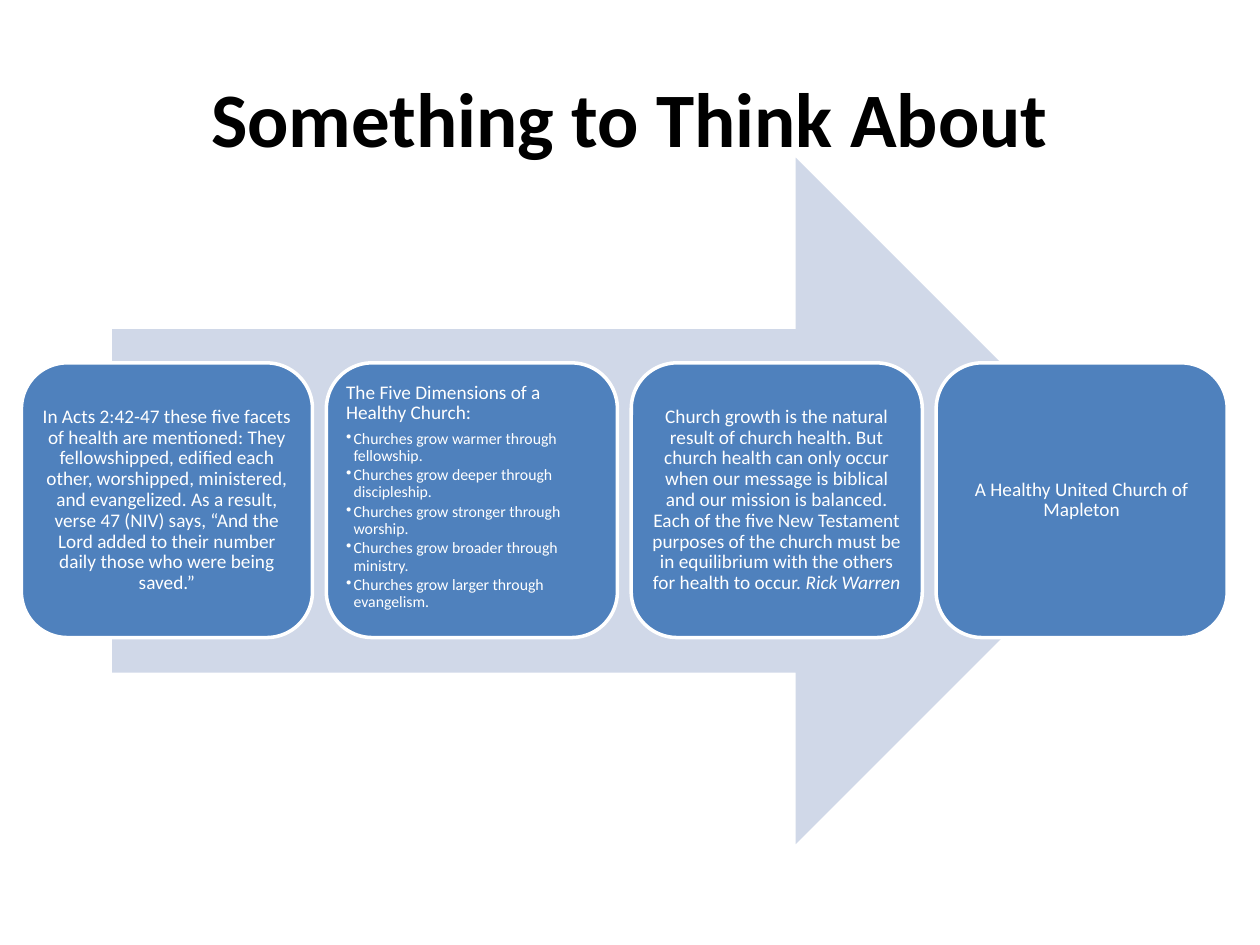
import pptx
import pptx.dml.color
import pptx.enum.shapes
import pptx.enum.text
import pptx.oxml.ns
import pptx.util
from lxml import etree

Inches = pptx.util.Inches
Pt = pptx.util.Pt
ALIGN = pptx.enum.text.PP_ALIGN
ANCHOR = pptx.enum.text.MSO_ANCHOR
SHAPE = pptx.enum.shapes.MSO_SHAPE

COLORS = {"title": "000000", "arrow": "D0D8E8", "card": "4F81BD", "white": "FFFFFF"}
CARD_LEFT, CARD_TOP, CARD_WIDTH, CARD_HEIGHT = 0.17, 2.88, 2.31, 2.18
CARD_STEP = 2.42

ACTS = (
    "In Acts 2:42-47 these five facets of health are mentioned: They fellowshipped, "
    "edified each other, worshipped, ministered, and evangelized. As a result, verse 47 "
    "(NIV) says, “And the Lord added to their number daily those who were being saved.”"
)
DIMENSIONS = [
    ("warmer", "fellowship"),
    ("deeper", "discipleship"),
    ("stronger", "worship"),
    ("broader", "ministry"),
    ("larger", "evangelism"),
]
GROWTH = (
    "Church growth is the natural result of church health. But church health can only "
    "occur when our message is biblical and our mission is balanced. Each of the five New "
    "Testament purposes of the church must be in equilibrium with the others for health "
    "to occur. "
)


class Deck:
    font = "Calibri"

    def __init__(self):
        self.prs = pptx.Presentation()
        self.prs.slide_width, self.prs.slide_height = Inches(10), Inches(7.5)
        self.s = self.prs.slides.add_slide(self.prs.slide_layouts[5])

    def color(self, name):
        return pptx.dml.color.RGBColor.from_string(COLORS[name])

    def format_run(self, r, size, color, bold=False, italic=False):
        r.font.name, r.font.size = self.font, Pt(size)
        r.font.bold, r.font.italic = bold, italic
        r.font.color.rgb = self.color(color)

    def title(self, text):
        sp = self.s.shapes.title
        sp.left, sp.top, sp.width, sp.height = map(Inches, (0.5, 0.3, 9, 1.25))
        sp.text_frame.text = text
        sp.text_frame.vertical_anchor = ANCHOR.MIDDLE
        p = sp.text_frame.paragraphs[0]
        p.alignment = ALIGN.CENTER
        self.format_run(p.runs[0], 44, "title", bold=True)

    def shape(self, kind, x, y, w, h, fill):
        sp = self.s.shapes.add_shape(kind, Inches(x), Inches(y), Inches(w), Inches(h))
        sp.shadow.inherit = False
        sp.fill.solid()
        sp.fill.fore_color.rgb = self.color(fill)
        sp.line.fill.background()
        return sp

    def card(self, column, text, bullets=(), signature=None):
        sp = self.shape(SHAPE.ROUNDED_RECTANGLE, CARD_LEFT + column * CARD_STEP, CARD_TOP,
                        CARD_WIDTH, CARD_HEIGHT, "card")
        sp.line.color.rgb, sp.line.width = self.color("white"), Pt(2)
        tf = sp.text_frame
        tf.word_wrap = True
        tf.margin_left = tf.margin_top = tf.margin_right = tf.margin_bottom = Inches(0.05)
        tf.vertical_anchor = ANCHOR.TOP if bullets else ANCHOR.MIDDLE
        tf.text = text
        p = tf.paragraphs[0]
        p.alignment = ALIGN.LEFT if bullets else ALIGN.CENTER
        p.line_spacing, p.space_after = 0.9, Pt(3.85)
        self.format_run(p.runs[0], 11, "white")
        if signature:
            r = p.add_run()
            r.text = signature
            self.format_run(r, 11, "white", italic=True)
        for bullet in bullets:
            self.bullet(tf, bullet)

    def bullet(self, tf, text):
        p = tf.add_paragraph()
        p.text = text
        p.level, p.alignment = 1, ALIGN.LEFT
        pPr = p._p.get_or_add_pPr()
        pPr.set("marL", str(Inches(0.06)))
        pPr.set("indent", str(-Inches(0.06)))
        etree.SubElement(pPr, pptx.oxml.ns.qn("a:buChar"), char="•")
        p.line_spacing, p.space_after = 0.9, Pt(1.35)
        self.format_run(p.runs[0], 9, "white")


def main():
    deck = Deck()
    deck.title("Something to Think About")
    deck.shape(SHAPE.RIGHT_ARROW, 0.89, 1.25, 8.15, 5.45, "arrow")
    deck.card(0, ACTS)
    deck.card(1, "The Five Dimensions of a Healthy Church:",
              [f"Churches grow {how} through {means}." for how, means in DIMENSIONS])
    deck.card(2, GROWTH, signature="Rick Warren")
    deck.card(3, "A Healthy United Church of Mapleton")
    deck.prs.save("out.pptx")


if __name__ == "__main__":
    main()
